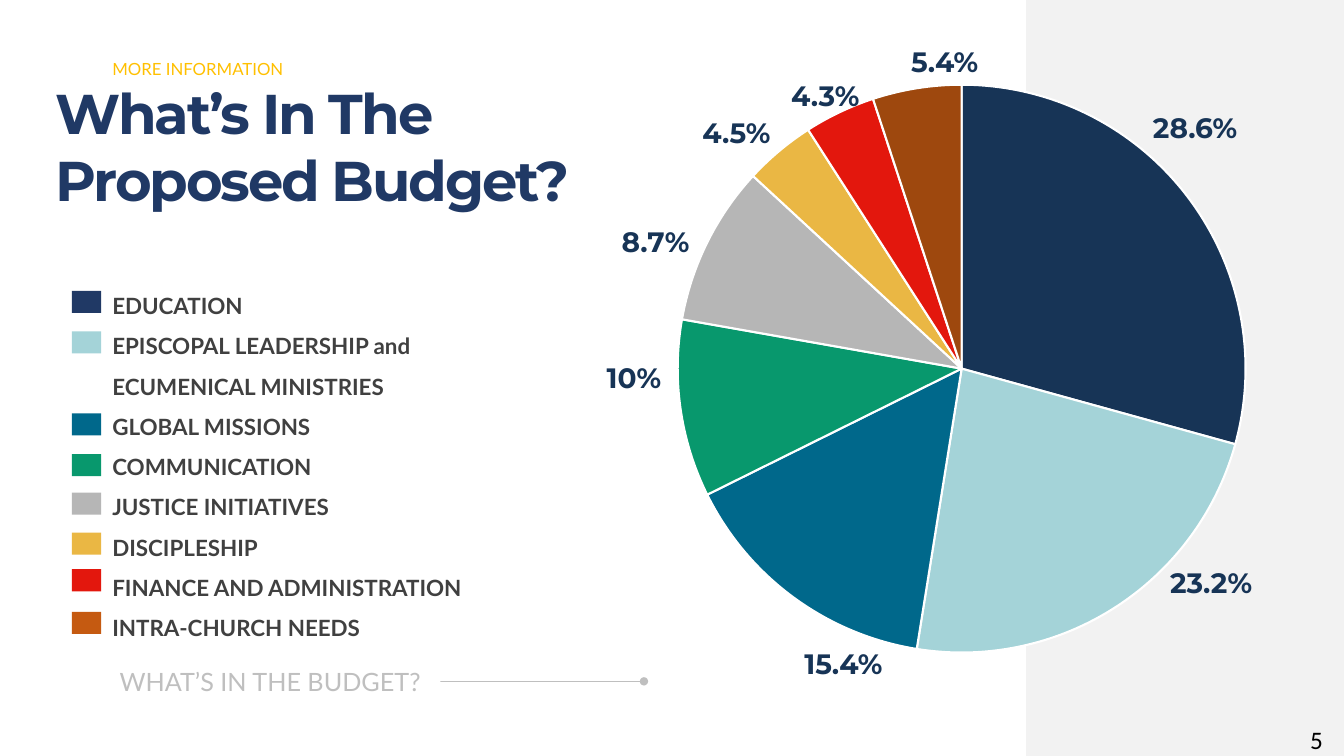
from lxml import etree
from pptx import Presentation
from pptx.chart.data import CategoryChartData
from pptx.dml.color import RGBColor
from pptx.enum.chart import XL_CHART_TYPE as ChartType
from pptx.enum.shapes import MSO_CONNECTOR as Connector, MSO_SHAPE as Shape
from pptx.enum.text import MSO_ANCHOR as Anchor, MSO_AUTO_SIZE as AutoSize, PP_ALIGN as Align
from pptx.oxml import parse_xml
from pptx.oxml.ns import nsdecls, qn
from pptx.util import Pt

NAVY, TITLE_BLUE, GREY = "173456", "203965", "BFBFBF"


def color(hex_string):
    return RGBColor.from_string(hex_string)


def add_block(left, top, width, height, fill=None, lines=(), font="Lato", size=16,
              ink=NAVY, bold=False, spacing=None, wrap=True):
    """Add a filled rectangle or, without a fill, a text box; return its runs."""
    area = Pt(left), Pt(top), Pt(width), Pt(height)
    if fill:
        box = page.shapes.add_shape(Shape.RECTANGLE, *area)
        box.shadow.inherit = False
        box.fill.solid()
        box.fill.fore_color.rgb = color(fill)
        box.line.fill.background()
    else:
        box = page.shapes.add_textbox(*area)
    if not lines:
        return []
    frame = box.text_frame
    frame.word_wrap = wrap
    frame.auto_size = AutoSize.SHAPE_TO_FIT_TEXT
    frame.vertical_anchor = Anchor.TOP
    spans = []
    for index, line in enumerate(lines):
        para = frame.add_paragraph() if index else frame.paragraphs[0]
        para.alignment = Align.LEFT
        if spacing:
            para.line_spacing = spacing
        span = para.add_run()
        span.text = line
        span.font.name = font
        span.font.size = Pt(size)
        span.font.bold = bold
        span.font.color.rgb = color(ink)
        spans.append(span)
    return spans


deck = Presentation()
deck.slide_width, deck.slide_height = Pt(960), Pt(540)
page = deck.slides.add_slide(deck.slide_layouts[6])

# Side panel and headings
add_block(733, 0, 227, 540, fill="F2F2F2")
title = add_block(32.4, 52.6, 414, 104.4, lines=["What’s In The Proposed Budget?"],
                  font="Montserrat", size=40, ink=TITLE_BLUE, bold=True)
title[0].font._element.set("spc", "-150")
add_block(73.2, 38.2, 149.8, 21.6, lines=["MORE INFORMATION"], size=12, ink="FFC000")

# Budget lines: name, share, slice colour, swatch colour, swatch top, label left, top, width
budget = [
    ("EDUCATION", 28.6, NAVY, TITLE_BLUE, 207.8, 816.5, 75.6, 75.6),
    ("EPISCOPAL LEADERSHIP and ECUMENICAL MINISTRIES", 23.2, "A4D3D8", "A4D3D8",
     236.7, 828.7, 400.3, 73.4),
    ("GLOBAL MISSIONS", 15.4, "00688B", "00688B", 295.2, 567.4, 457.9, 71.3),
    ("COMMUNICATION", 10, "08986D", "08986D", 324.4, 426.2, 254.2, 54),
    ("JUSTICE INITIATIVES", 8.7, "B6B6B6", "B6B6B6", 351.8, 437, 156.6, 63.4),
    ("DISCIPLESHIP", 4.5, "EAB744", "EAB744", 380.4, 494.6, 79.2, 63.4),
    ("FINANCE AND ADMINISTRATION", 4.3, "E3170D", "E3170D", 406.6, 558, 52.6, 63.4),
    ("INTRA-CHURCH NEEDS", 5.4, "9E480E", "C55A11", 437, 643.7, 28.4, 63.4),
]
add_block(73.2, 195.5, 269.3, 265, lines=[row[0] for row in budget],
          ink="404040", bold=True, spacing=1.5)

# Pie chart, in whole percent
data = CategoryChartData()
data.categories = [str(number) for number in range(1, len(budget) + 1)]
data.add_series("Series 1", [round(row[1]) for row in budget])
chart = page.shapes.add_chart(ChartType.PIE, Pt(459.4), Pt(52), Pt(455), Pt(427), data).chart
chart.has_title = False
chart.has_legend = False
chart.font.name = "Calibri"
chart.font.size = Pt(10)
chart.font.color.rgb = color("000000")
pie = chart.plots[0]
pie.vary_by_categories = True
for index, row in enumerate(budget):
    piece = pie.series[0].points[index].format
    piece.fill.solid()
    piece.fill.fore_color.rgb = color(row[2])
    piece.line.color.rgb = color("FFFFFF")
    piece.line.width = Pt(1.5)

# Fixed plot area inside the chart frame
plot_area = chart._chartSpace.find(".//" + qn("c:plotArea"))
for layout in plot_area.findall(qn("c:layout")):
    plot_area.remove(layout)
plot_area.insert(0, parse_xml(
    f'<c:layout {nsdecls("c")}><c:manualLayout><c:layoutTarget val="inner"/>'
    '<c:xMode val="edge"/><c:yMode val="edge"/><c:x val="0.05"/><c:y val="0.02"/>'
    '<c:w val="0.9"/><c:h val="0.95"/></c:manualLayout></c:layout>'))

# Footer line with a round end, partly covered by its caption
footer = page.shapes.add_connector(Connector.STRAIGHT, Pt(130.3), Pt(486.7), Pt(460), Pt(486.7))
footer.line.color.rgb = color(GREY)
footer.line.width = Pt(0.5)
etree.SubElement(footer.line._get_or_add_ln(), qn("a:tailEnd"), type="oval")
etree.SubElement(footer._element.spPr, qn("a:effectLst"))
add_block(78.3, 472.3, 236.2, 28.8, fill="FFFFFF", lines=["WHAT’S IN THE BUDGET?"],
          size=18, ink=GREY)

# Share labels and legend swatches
for name, share, slice_fill, swatch, swatch_top, left, top, width in budget:
    add_block(left, top, width, 31.7, lines=[f"{share}%"], font="Montserrat", size=20,
              bold=True, wrap=False)
    add_block(51.3, swatch_top, 20.9, 15.8, fill=swatch)

# Page number
add_block(928.8, 514.1, 21.6, 28.8, lines=["5"], font="Calibri", size=18, ink="000000")

deck.save("out.pptx")
